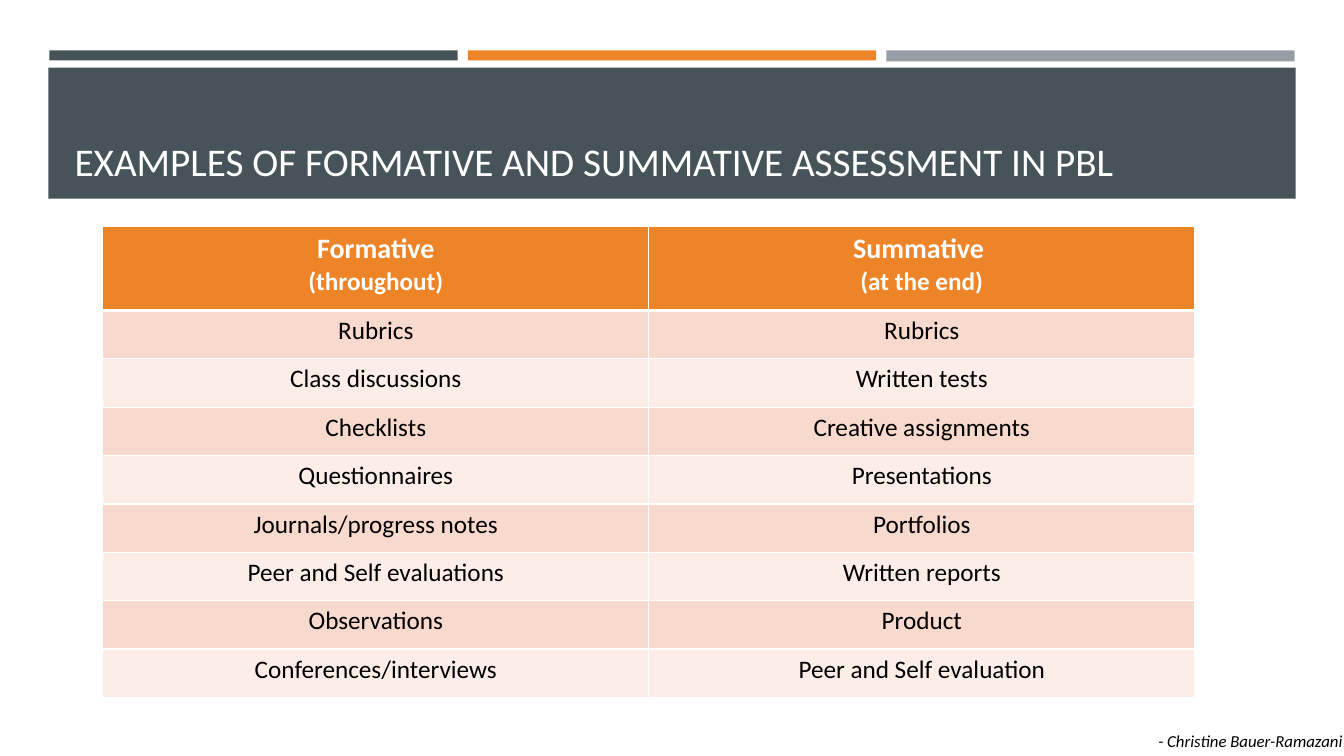
from dataclasses import dataclass

from lxml.etree import SubElement
from pptx import Presentation
from pptx.dml.color import RGBColor
from pptx.enum.shapes import MSO_SHAPE
from pptx.enum.text import MSO_ANCHOR, PP_ALIGN
from pptx.oxml.ns import qn
from pptx.util import Inches, Pt

FONT = "Calibri"
WHITE, BLACK = "FFFFFF", "000000"
SLATE, ORANGE, GREY = "465359", "ED8428", "969FA7"
ROW_FILLS = ("F8D9CD", "FCEDE8")


@dataclass
class Bar:
    left: float
    top: float
    width: float
    height: float
    color: str


BARS = [
    Bar(0.49, 0.5, 4.05, 0.1, SLATE),
    Bar(8.79, 0.5, 4.05, 0.11, GREY),
    Bar(4.64, 0.5, 4.05, 0.1, ORANGE),
    Bar(0.48, 0.67, 12.37, 1.3, SLATE),
]
HEADINGS = [("Formative", "(throughout)"), ("Summative ", "(at the end)")]
ASSESSMENTS = [
    ("Rubrics", "Rubrics"),
    ("Class discussions", "Written tests"),
    ("Checklists", "Creative assignments"),
    ("Questionnaires", "Presentations"),
    ("Journals/progress notes", "Portfolios"),
    ("Peer and Self evaluations", "Written reports"),
    ("Observations", "Product"),
    ("Conferences/interviews", "Peer and Self evaluation"),
]


def set_fill(target, color: str) -> None:
    target.fill.solid()
    target.fill.fore_color.rgb = RGBColor.from_string(color)


def write(p, text: str, *, size: float = 18, color: str = BLACK, bold: bool = False,
          italic: bool = False, align=PP_ALIGN.LEFT) -> None:
    p.alignment = align
    r = p.add_run()
    r.text = text
    r.font.name = FONT
    r.font.size = Pt(size)
    r.font.bold = bold
    r.font.italic = italic
    r.font.color.rgb = RGBColor.from_string(color)


def add_bar(slide, bar: Bar) -> None:
    sp = slide.shapes.add_shape(MSO_SHAPE.RECTANGLE, Inches(bar.left), Inches(bar.top),
                                Inches(bar.width), Inches(bar.height))
    sp.shadow.inherit = False
    set_fill(sp, bar.color)
    sp.line.fill.background()


def add_title(slide, text: str) -> None:
    """Fill the title placeholder and bring it in front of the bars."""
    sp = slide.shapes.title
    sp.left, sp.top = Inches(0.64), Inches(0.77)
    sp.width, sp.height = Inches(12.06), Inches(1.11)
    tf = sp.text_frame
    tf.word_wrap = True
    tf.vertical_anchor = MSO_ANCHOR.BOTTOM
    write(tf.paragraphs[0], text, size=28, color=WHITE)
    slide.shapes.element.append(sp.element)


def format_cell(cell, fill: str, bottom: float) -> None:
    """Give a cell white borders, with its own bottom width, and a fill."""
    tc_pr = cell._tc.get_or_add_tcPr()
    for side, width in (("L", 1), ("R", 1), ("T", 1), ("B", bottom)):
        ln = SubElement(tc_pr, qn(f"a:ln{side}"), w=str(Pt(width)))
        solid = SubElement(ln, qn("a:solidFill"))
        SubElement(solid, qn("a:srgbClr"), val=WHITE)
    set_fill(cell, fill)


def add_assessment_table(slide) -> None:
    table = slide.shapes.add_table(len(ASSESSMENTS) + 1, len(HEADINGS), Inches(1.02),
                                   Inches(2.25), Inches(10.83), Inches(4.67)).table
    for i, row in enumerate(table.rows):
        row.height = Inches(0.48 if i else 0.83)
    for col, (name, timing) in enumerate(HEADINGS):
        cell = table.cell(0, col)
        format_cell(cell, ORANGE, bottom=3)
        tf = cell.text_frame
        write(tf.paragraphs[0], name, size=20, color=WHITE, bold=True, align=PP_ALIGN.CENTER)
        write(tf.add_paragraph(), timing, color=WHITE, bold=True, align=PP_ALIGN.CENTER)
    for i, examples in enumerate(ASSESSMENTS):
        for col, example in enumerate(examples):
            cell = table.cell(i + 1, col)
            format_cell(cell, ROW_FILLS[i % 2], bottom=1)
            if i == 0:
                cell._tc.tcPr.find(qn("a:lnT")).set("w", str(Pt(3)))
            write(cell.text_frame.paragraphs[0], example, align=PP_ALIGN.CENTER)


def add_credit(slide, text: str) -> None:
    sp = slide.shapes.add_textbox(Inches(11.39), Inches(7.2), Inches(3.56), Inches(0.3))
    tf = sp.text_frame
    tf.word_wrap = True
    write(tf.paragraphs[0], text, size=12, italic=True)


def main() -> None:
    prs = Presentation()
    prs.slide_width, prs.slide_height = Inches(13.33), Inches(7.5)
    slide = prs.slides.add_slide(prs.slide_layouts[5])
    set_fill(slide.background, WHITE)
    for bar in BARS:
        add_bar(slide, bar)
    add_title(slide, "EXAMPLES OF FORMATIVE AND SUMMATIVE ASSESSMENT IN PBL")
    add_assessment_table(slide)
    add_credit(slide, "- Christine Bauer-Ramazani")
    prs.save("out.pptx")


if __name__ == "__main__":
    main()
